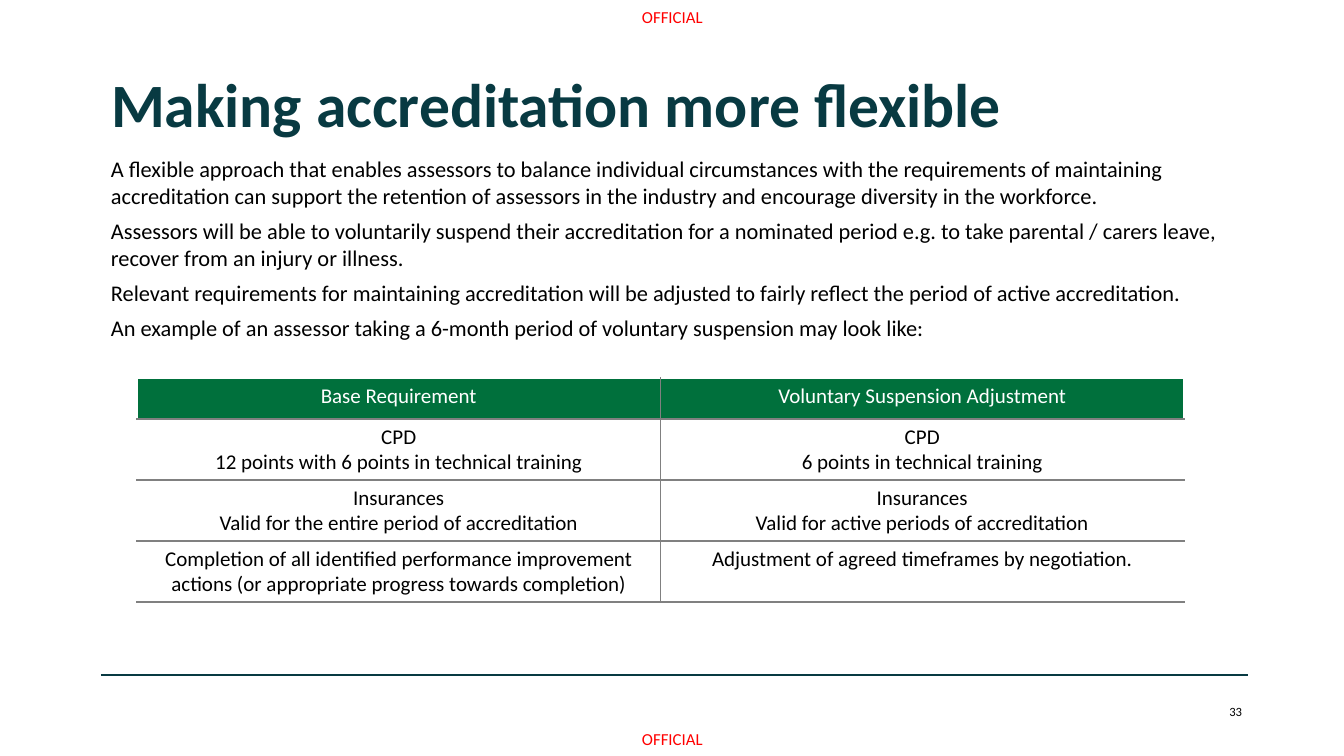
from pptx import Presentation
from pptx.dml.color import RGBColor
from pptx.enum.shapes import MSO_CONNECTOR
from pptx.enum.text import MSO_ANCHOR, PP_ALIGN
from pptx.oxml.ns import qn
from pptx.util import Emu, Pt
from lxml import etree

PX = 914400 / 100.8
FONT = "Calibri"
TEAL = RGBColor(0x08, 0x3A, 0x42)
GREEN = RGBColor(0x00, 0x70, 0x3C)
GREY = RGBColor(0x80, 0x80, 0x80)
RED = RGBColor(0xFF, 0x00, 0x00)
BLACK = RGBColor(0x00, 0x00, 0x00)
WHITE = RGBColor(0xFF, 0xFF, 0xFF)
LEFT, CENTER, RIGHT = PP_ALIGN.LEFT, PP_ALIGN.CENTER, PP_ALIGN.RIGHT
TOP = MSO_ANCHOR.TOP
STRAIGHT = MSO_CONNECTOR.STRAIGHT

TITLE = "Making accreditation more flexible"
BODY = [
    "A flexible approach that enables assessors to balance individual circumstances with the "
    "requirements of maintaining accreditation can support the retention of assessors in the "
    "industry and encourage diversity in the workforce.",
    "Assessors will be able to voluntarily suspend their accreditation for a nominated period "
    "e.g. to take parental / carers leave, recover from an injury or illness.",
    "Relevant requirements for maintaining accreditation will be adjusted to fairly reflect "
    "the period of active accreditation.",
    "An example of an assessor taking a 6-month period of voluntary suspension may look like:",
]
ROWS = [
    ("Base Requirement", "Voluntary Suspension Adjustment"),
    ("CPD\n12 points with 6 points in technical training",
     "CPD\n6 points in technical training"),
    ("Insurances\nValid for the entire period of accreditation",
     "Insurances\nValid for active periods of accreditation"),
    ("Completion of all identified performance improvement actions "
     "(or appropriate progress towards completion)",
     "Adjustment of agreed timeframes by negotiation."),
]


def px(n):
    """Turn a pixel length into EMU."""
    return Emu(round(n * PX))


def format_text(tf, size, color, align=LEFT, bold=False, after=0):
    """Format every paragraph and run of a text frame."""
    for p in tf.paragraphs:
        p.alignment = align
        p.space_before, p.space_after = Pt(0), Pt(after)
        for r in p.runs:
            r.font.name, r.font.size = FONT, Pt(size)
            r.font.bold, r.font.color.rgb = bold, color


def add_text(s, box, text, size, color, align=LEFT, after=0, inset=(0, 0)):
    """Add a wrapped text box filling the given box."""
    tf = s.shapes.add_textbox(*map(px, box)).text_frame
    tf.word_wrap = True
    tf.margin_left = tf.margin_right = px(inset[0])
    tf.margin_top = tf.margin_bottom = px(inset[1])
    tf.text = text
    format_text(tf, size, color, align, after=after)


def place_title(s, box):
    """Move and format the title placeholder."""
    title = s.shapes.title
    title.left, title.top, title.width, title.height = map(px, box)
    tf = title.text_frame
    tf.text = TITLE
    tf.vertical_anchor = TOP
    format_text(tf, 44, TEAL, bold=True)
    tf.paragraphs[0].line_spacing = 0.9


def add_rule(s, x, y, width):
    """Draw the horizontal footer rule."""
    line = s.shapes.add_connector(STRAIGHT, px(x), px(y), px(x + width), px(y))
    line.line.color.rgb, line.line.width = TEAL, Pt(1.5)
    etree.SubElement(line._element.spPr, qn("a:effectLst"))


def set_borders(cell, colors):
    """Give a cell 1 pt borders in left, right, top, bottom order."""
    tcPr = cell._tc.get_or_add_tcPr()
    for i, (side, color) in enumerate(zip("LRTB", colors)):
        ln = etree.Element(qn(f"a:ln{side}"), w=str(Pt(1)))
        fill = etree.SubElement(ln, qn("a:solidFill"))
        etree.SubElement(fill, qn("a:srgbClr"), val=str(color))
        tcPr.insert(i, ln)


def add_requirements(s, box, heights):
    """Add the two-column table of requirements and adjustments."""
    table = s.shapes.add_table(len(ROWS), len(ROWS[0]), *map(px, box)).table
    for i, (row, height) in enumerate(zip(ROWS, heights)):
        table.rows[i].height = px(height)
        for j, text in enumerate(row):
            cell = table.cell(i, j)
            cell.text = text
            cell.fill.solid()
            cell.fill.fore_color.rgb = WHITE if i else GREEN
            format_text(cell.text_frame, 15, BLACK if i else WHITE, CENTER)
            set_borders(cell, (GREY if j else WHITE, WHITE if j else GREY,
                               GREY if i else WHITE, GREY))


def build_slide(s, width, height):
    """Place all parts of the accreditation slide."""
    for y in (7, height - 27):
        add_text(s, (width // 2 - 30, y, 64, 20), "OFFICIAL", 12, RED)
    add_rule(s, 101, 675, 1147)
    place_title(s, (101, 69, 1168, 91))
    add_text(s, (101, 150, 1145, 537), "\n".join(BODY), 16, BLACK, after=6, inset=(10, 5))
    add_requirements(s, (137, 378, 1047, 224), (41, 61, 61, 61))
    add_text(s, (1123, 704, 119, 15), "33", 9, BLACK, RIGHT)


def main():
    """Create the presentation and save it."""
    prs = Presentation()
    prs.slide_width, prs.slide_height = px(1344), px(756)
    build_slide(prs.slides.add_slide(prs.slide_layouts[5]), 1344, 756)
    prs.save("out.pptx")


if __name__ == "__main__":
    main()
